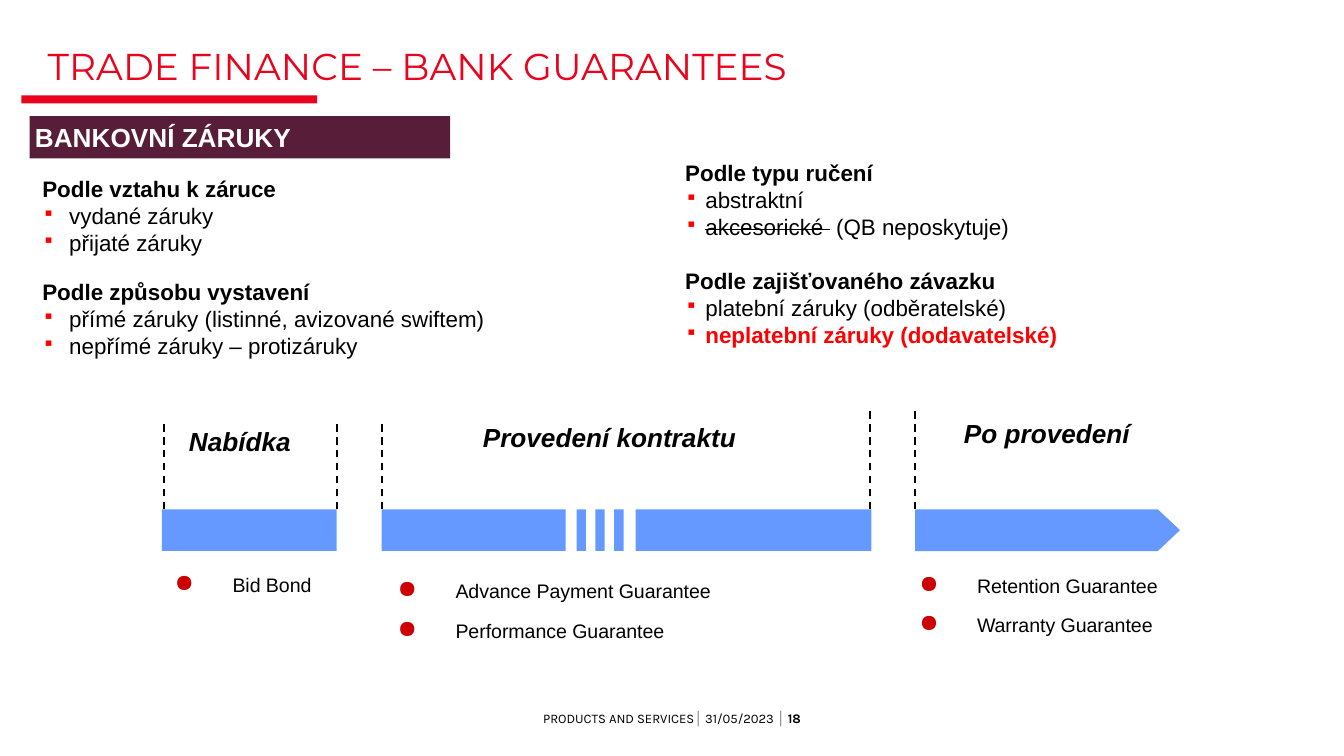
from lxml import etree
from pptx import Presentation
from pptx.dml.color import RGBColor
from pptx.enum.dml import MSO_LINE
from pptx.enum.shapes import MSO_CONNECTOR, MSO_SHAPE
from pptx.enum.text import MSO_ANCHOR, PP_ALIGN
from pptx.oxml.ns import qn
from pptx.util import Inches, Pt

RECTANGLE = MSO_SHAPE.RECTANGLE
PENTAGON = MSO_SHAPE.PENTAGON
STRAIGHT = MSO_CONNECTOR.STRAIGHT
DASH = MSO_LINE.DASH
TOP, MIDDLE, BOTTOM = MSO_ANCHOR.TOP, MSO_ANCHOR.MIDDLE, MSO_ANCHOR.BOTTOM
LEFT, CENTER = PP_ALIGN.LEFT, PP_ALIGN.CENTER

COLUMNS, ROWS = 100, 56.25
SLIDE_WIDTH = Inches(10)
SLIDE_HEIGHT = SLIDE_WIDTH * 9 // 16
COLORS = {
    "brand": "E9041E", "banner": "581D39", "bar": "6699FF", "ink": "010101",
    "divider": "808080", "white": "FFFFFF", "marker": "FF0000", "dot": "CC0000",
}
SQUARE = ("▪", "marker", 75)
DOT = ("●", "dot", 125)
BAR_TOP, BAR_HEIGHT = 37.9, 3.1


def column(count):
    return round(SLIDE_WIDTH * count / COLUMNS)


def row(count):
    return round(SLIDE_HEIGHT * count / ROWS)


def color(name):
    return RGBColor.from_string(COLORS[name])


def add_block(slide, area, fill, preset=RECTANGLE):
    left, top, width, height = area
    shape = slide.shapes.add_shape(preset, column(left), row(top), column(width), row(height))
    shape.shadow.inherit = False
    shape.fill.solid()
    shape.fill.fore_color.rgb = color(fill)
    shape.line.fill.background()
    return shape


def add_dashed_line(slide, x, top):
    line = slide.shapes.add_connector(
        STRAIGHT, column(x), row(BAR_TOP), column(x), row(top))
    line.line.color.rgb = color("ink")
    line.line.width = Pt(1)
    line.line.dash_style = DASH
    etree.SubElement(line._element.spPr, qn("a:effectLst"))


def set_frame(shape, margins=(0, 0), anchor=TOP, wrap=True):
    frame = shape.text_frame
    frame.word_wrap = wrap
    frame.vertical_anchor = anchor
    frame.margin_left = frame.margin_right = Inches(margins[0])
    frame.margin_top = frame.margin_bottom = Inches(margins[1])
    return frame


def add_text_box(slide, area, **options):
    left, top, width, height = area
    shape = slide.shapes.add_textbox(column(left), row(top), column(width), row(height))
    return set_frame(shape, **options)


def add_bullet(paragraph, bullet, indent):
    character, tint, size = bullet
    properties = paragraph._p.get_or_add_pPr()
    properties.set("marL", str(Inches(indent)))
    properties.set("indent", str(-Inches(indent)))
    tint_element = etree.SubElement(properties, qn("a:buClr"))
    etree.SubElement(tint_element, qn("a:srgbClr"), val=COLORS[tint])
    etree.SubElement(properties, qn("a:buSzPct"), val=str(size * 1000))
    etree.SubElement(properties, qn("a:buChar"), char=character)


def add_run(paragraph, text, size, font="Arial", tint="ink", bold=False, italic=False, strike=False):
    run = paragraph.add_run()
    run.text = text
    run.font.size = Pt(size)
    run.font.name = font
    run.font.bold = bold
    run.font.italic = italic
    run.font.color.rgb = color(tint)
    if strike:
        run.font._element.set("strike", "sngStrike")


def next_paragraph(frame, space_before=0):
    first = frame.paragraphs[0]
    if not first.runs:
        return first
    paragraph = frame.add_paragraph()
    paragraph.space_before = Pt(space_before)
    return paragraph


def add_line_of_text(frame, text, size, align=LEFT, spacing=None, **style):
    paragraph = next_paragraph(frame)
    paragraph.alignment = align
    paragraph.line_spacing = spacing
    add_run(paragraph, text, size, **style)


def add_groups(frame, groups, gap, indent):
    for heading, items in groups:
        add_run(next_paragraph(frame, gap), heading, 12, bold=True)
        for runs in items:
            paragraph = next_paragraph(frame)
            add_bullet(paragraph, SQUARE, indent)
            for text, style in runs:
                add_run(paragraph, text, 12, **style)


def add_header(slide):
    add_block(slide, (1.6, 7.1, 22, 0.6), "brand")
    title = add_text_box(slide, (3.55, 3.9, 92.9, 2.6), anchor=BOTTOM)
    add_line_of_text(title, "TRADE FINANCE – BANK GUARANTEES", 20, spacing=0.75,
                     font="Montserrat", tint="brand")
    banner = add_block(slide, (2.2, 8.65, 31.3, 3.15), "banner")
    frame = set_frame(banner, margins=(0.04, 0.04), anchor=MIDDLE)
    add_line_of_text(frame, "BANKOVNÍ ZÁRUKY", 14, tint="white", bold=True)


def add_classification(slide):
    left_groups = [
        ("Podle vztahu k záruce", [[("vydané záruky", {})], [("přijaté záruky", {})]]),
        ("Podle způsobu vystavení", [
            [("přímé záruky (listinné, avizované swiftem)", {})],
            [("nepřímé záruky – protizáruky", {})]]),
    ]
    right_groups = [
        ("Podle typu ručení", [
            [("abstraktní", {})],
            [("akcesorické ", {"strike": True}), (" (QB neposkytuje)", {})]]),
        ("Podle zajišťovaného závazku", [
            [("platební záruky (odběratelské)", {})],
            [("neplatební záruky (dodavatelské)", {"tint": "marker", "bold": True})]]),
    ]
    add_groups(add_text_box(slide, (3.15, 13.05, 39.9, 13.6)), left_groups, 12, 0.2)
    right_frame = add_text_box(slide, (50, 11.35, 41.9, 15.1), margins=(0.1, 0.05))
    add_groups(right_frame, right_groups, 14.5, 0.15)


def add_timeline(slide):
    stripes = [(42.9 + 1.4 * index, 0.7) for index in range(3)]
    for left, width in [(12.05, 13), (28.4, 13.7), (47.3, 17.55), *stripes]:
        add_block(slide, (left, BAR_TOP, width, BAR_HEIGHT), "bar")
    arrow = add_block(slide, (68.1, BAR_TOP, 19.7, BAR_HEIGHT), "bar", PENTAGON)
    arrow.adjustments[0] = 0.53
    for x, top in [(12.2, 31.4), (25.05, 31.4), (28.45, 31.4), (64.75, 30.5), (68.1, 30.5)]:
        add_dashed_line(slide, x, top)


def add_phase(slide, name, name_area, guarantees, list_area):
    margins = (0.11, 0.06)
    label = add_text_box(slide, name_area, margins=margins)
    add_line_of_text(label, name, 14, CENTER, 1.2, bold=True, italic=True)
    frame = add_text_box(slide, list_area, margins=margins)
    for guarantee in guarantees:
        paragraph = next_paragraph(frame, 8.5)
        add_bullet(paragraph, DOT, 0.43)
        add_run(paragraph, guarantee, 10.5)


def add_footer(slide):
    frame = add_text_box(slide, (39.1, 52.85, 21.8, 1.2), anchor=MIDDLE, wrap=False)
    paragraph = frame.paragraphs[0]
    paragraph.alignment = CENTER
    for text, tint, bold in [
        ("PRODUCTS AND SERVICES", "ink", False), ("│ ", "divider", False),
        ("31/05/2023 ", "ink", False), ("│ ", "divider", False), ("18", "ink", True),
    ]:
        add_run(paragraph, text, 7, font="Karla", tint=tint, bold=bold)


def main():
    presentation = Presentation()
    presentation.slide_width, presentation.slide_height = SLIDE_WIDTH, SLIDE_HEIGHT
    slide = presentation.slides.add_slide(presentation.slide_layouts[6])
    add_header(slide)
    add_classification(slide)
    add_timeline(slide)
    add_phase(slide, "Nabídka", (11.2, 30.6, 13.3, 2.1),
              ["Bid Bond"], (11.9, 42, 12.8, 2.1))
    add_phase(slide, "Provedení kontraktu", (29.9, 30.3, 30.9, 2.1),
              ["Advance Payment Guarantee", "Performance Guarantee"], (28.5, 42.5, 36.3, 4.1))
    add_phase(slide, "Po provedení", (68.2, 30, 19.4, 2.1),
              ["Retention Guarantee", "Warranty Guarantee"], (67.3, 42.1, 21.1, 4))
    add_footer(slide)
    presentation.save("out.pptx")


if __name__ == "__main__":
    main()
